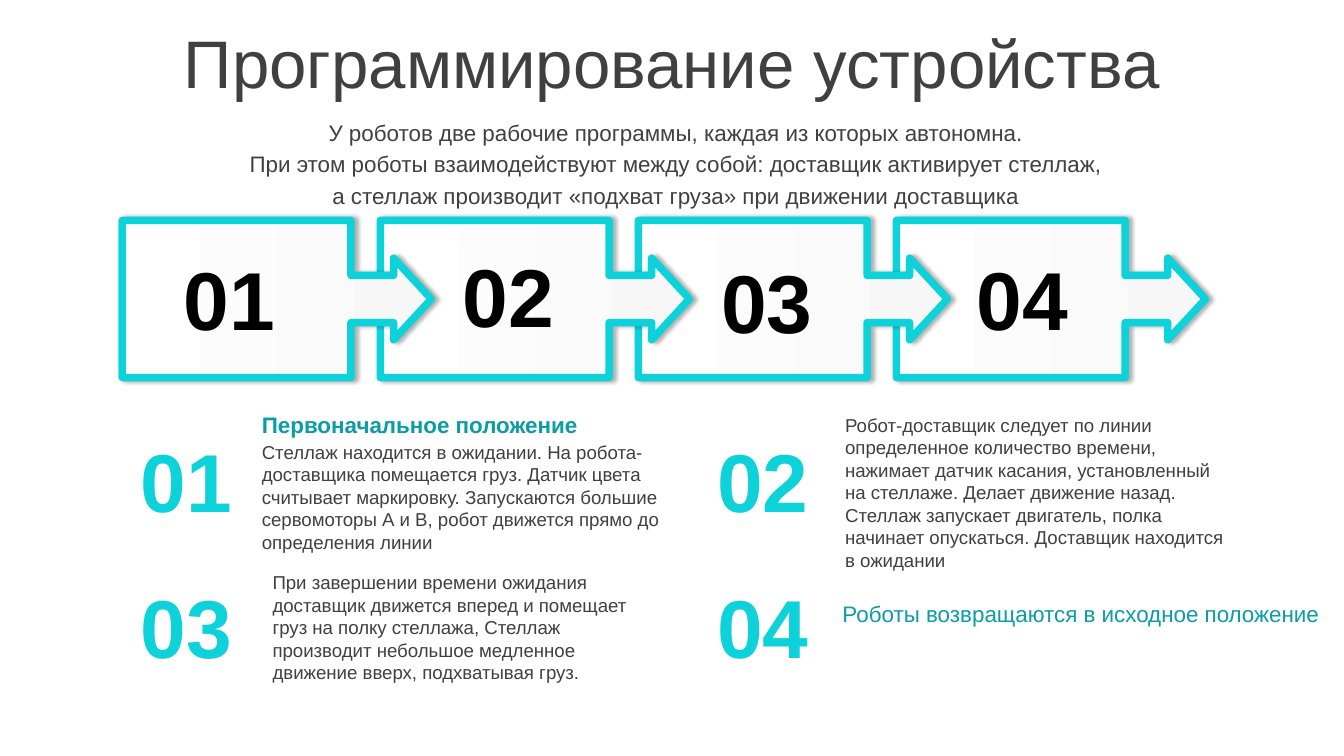
from dataclasses import dataclass

from lxml import etree
from pptx import Presentation
from pptx.dml.color import RGBColor
from pptx.enum.shapes import MSO_SHAPE
from pptx.enum.text import MSO_ANCHOR, MSO_AUTO_SIZE, PP_ALIGN
from pptx.oxml import parse_xml
from pptx.oxml.ns import nsdecls, qn
from pptx.util import Inches, Pt

CALLOUT = MSO_SHAPE.RIGHT_ARROW_CALLOUT
MIDDLE = MSO_ANCHOR.MIDDLE
LEFT, CENTER = PP_ALIGN.LEFT, PP_ALIGN.CENTER
NO_FIT = MSO_AUTO_SIZE.NONE
COLUMNS = 100


@dataclass(frozen=True)
class Theme:
    """Colours, font and type sizes of the slide."""
    font: str = "Arial"
    text: str = "404040"
    accent: str = "0DD2D9"
    heading: str = "0A9DA3"
    step: str = "000000"
    shade: str = "F7F7F7"
    paper: str = "FFFFFF"
    title_size: int = 36
    number_size: int = 44
    lead_size: int = 12
    note_size: int = 10
    outline: int = 4


class ProcessSlide:
    """Draws on one slide, with lengths in grid units of a hundredth of its width."""

    def __init__(self, deck, theme):
        self.theme = theme
        self.unit = deck.slide_width / COLUMNS
        self.slide = deck.slides.add_slide(deck.slide_layouts[1])

    def place(self, *lengths):
        """Turn grid units into slide lengths."""
        return [round(length * self.unit) for length in lengths]

    def style(self, paragraph, size, color, bold=False, align=LEFT):
        """Format a whole paragraph."""
        paragraph.alignment = align
        paragraph.font.name = self.theme.font
        paragraph.font.size = Pt(size)
        paragraph.font.bold = bold
        paragraph.font.color.rgb = RGBColor.from_string(color)

    def fill_placeholder(self, holder, cell, lines, size, gap=0):
        """Move a template placeholder and set its centred lines."""
        holder.left, holder.top, holder.width, holder.height = self.place(*cell)
        frame = holder.text_frame
        frame.text = "\n".join(lines)
        frame.auto_size = NO_FIT
        frame.word_wrap = True
        frame.vertical_anchor = MIDDLE
        for index, paragraph in enumerate(frame.paragraphs):
            properties = paragraph._p.get_or_add_pPr()
            properties.set("marL", "0")
            properties.set("indent", "0")
            etree.SubElement(properties, qn("a:buNone"))
            paragraph.space_before = Pt(gap if index else 0)
            self.style(paragraph, size, self.theme.text, align=CENTER)

    def title(self, cell, wording):
        """Set the slide title."""
        self.fill_placeholder(self.slide.shapes.title, cell, [wording], self.theme.title_size)

    def lead(self, cell, lines):
        """Set the introduction in the body placeholder."""
        self.fill_placeholder(self.slide.placeholders[1], cell, lines, self.theme.lead_size, gap=2.4)

    def text(self, cell, wording, size, color, bold=False, align=LEFT):
        """Add a wrapped text box."""
        frame = self.slide.shapes.add_textbox(*self.place(*cell)).text_frame
        frame.word_wrap = True
        frame.text = wording
        self.style(frame.paragraphs[0], size, color, bold, align)

    def note(self, cell, wording):
        """Add a step description."""
        self.text(cell, wording, self.theme.note_size, self.theme.text)

    def heading(self, cell, wording, bold=False):
        """Add a coloured step heading."""
        self.text(cell, wording, self.theme.lead_size, self.theme.heading, bold)

    def number(self, left, top, step, color):
        """Add a large two-digit step number."""
        self.text((left, top, 11.1, 8.4), f"{step:02}", self.theme.number_size, color, True, CENTER)

    def callout(self, cell):
        """Add an outlined arrow callout with a soft shadow."""
        arrow = self.slide.shapes.add_shape(CALLOUT, *self.place(*cell))
        for index, share in enumerate((0.3, 0.26, 0.24, 0.74)):
            arrow.adjustments[index] = share
        arrow.fill.gradient()
        arrow.fill.gradient_angle = 180
        for stop, color in zip(arrow.fill.gradient_stops, (self.theme.shade, self.theme.paper)):
            stop.color.rgb = RGBColor.from_string(color)
        arrow.line.color.rgb = RGBColor.from_string(self.theme.accent)
        arrow.line.width = Pt(self.theme.outline)
        etree.SubElement(arrow.line._ln, qn("a:round"))
        arrow.shadow.inherit = False
        effects = arrow._element.spPr.find(qn("a:effectLst"))
        effects.append(parse_xml(
            f'<a:outerShdw {nsdecls("a")} blurRad="{Pt(2)}" dist="{Pt(2)}" dir="0">'
            '<a:srgbClr val="000000"><a:alpha val="30000"/></a:srgbClr></a:outerShdw>'))


def main():
    """Build and save the slide."""
    deck = Presentation()
    deck.slide_width = Inches(10)
    deck.slide_height = deck.slide_width * 9 // 16
    theme = Theme()
    page = ProcessSlide(deck, theme)

    page.title((0, 1.4, 100, 6.3), "Программирование устройства")
    page.lead((0.3, 8.2, 100, 8), [
        "У роботов две рабочие программы, каждая из которых автономна.",
        "При этом роботы взаимодействуют между собой: доставщик активирует стеллаж,",
        "а стеллаж производит «подхват груза» при движении доставщика",
    ])

    for position in reversed(range(4)):
        page.callout((9.1 + 19.2 * position, 16.4, 23, 11.7))
    step_places = [(11.5, 18), (32.3, 17.8), (51.5, 18.2), (70.5, 18)]
    for step, (left, top) in enumerate(step_places, 1):
        page.number(left, top, step, theme.step)
        row, column = divmod(step - 1, 2)
        page.number(8.3 + 42.9 * column, 31.5 + 10.9 * row, step, theme.accent)

    page.heading((18.5, 30.1, 28.5, 3), "Первоначальное положение", bold=True)
    page.note((18.5, 32.3, 32, 9.4),
              "Стеллаж находится в ожидании. На робота-доставщика помещается груз. "
              "Датчик цвета считывает маркировку. Запускаются большие сервомоторы А и В, "
              "робот движется прямо до определения линии")
    page.note((61.9, 30.3, 30.6, 12.8),
              "Робот-доставщик следует по линии определенное количество времени, "
              "нажимает датчик касания, установленный на стеллаже. Делает движение назад. "
              "Стеллаж запускает двигатель, полка начинает опускаться. "
              "Доставщик находится в ожидании")
    page.note((19.3, 42, 30.6, 9.4),
              "При завершении времени ожидания доставщик движется вперед и помещает груз "
              "на полку стеллажа, Стеллаж производит небольшое медленное движение вверх, "
              "подхватывая груз.")
    page.heading((61.7, 44.2, 50, 3), "Роботы возвращаются в исходное положение")

    deck.save("out.pptx")


if __name__ == "__main__":
    main()
